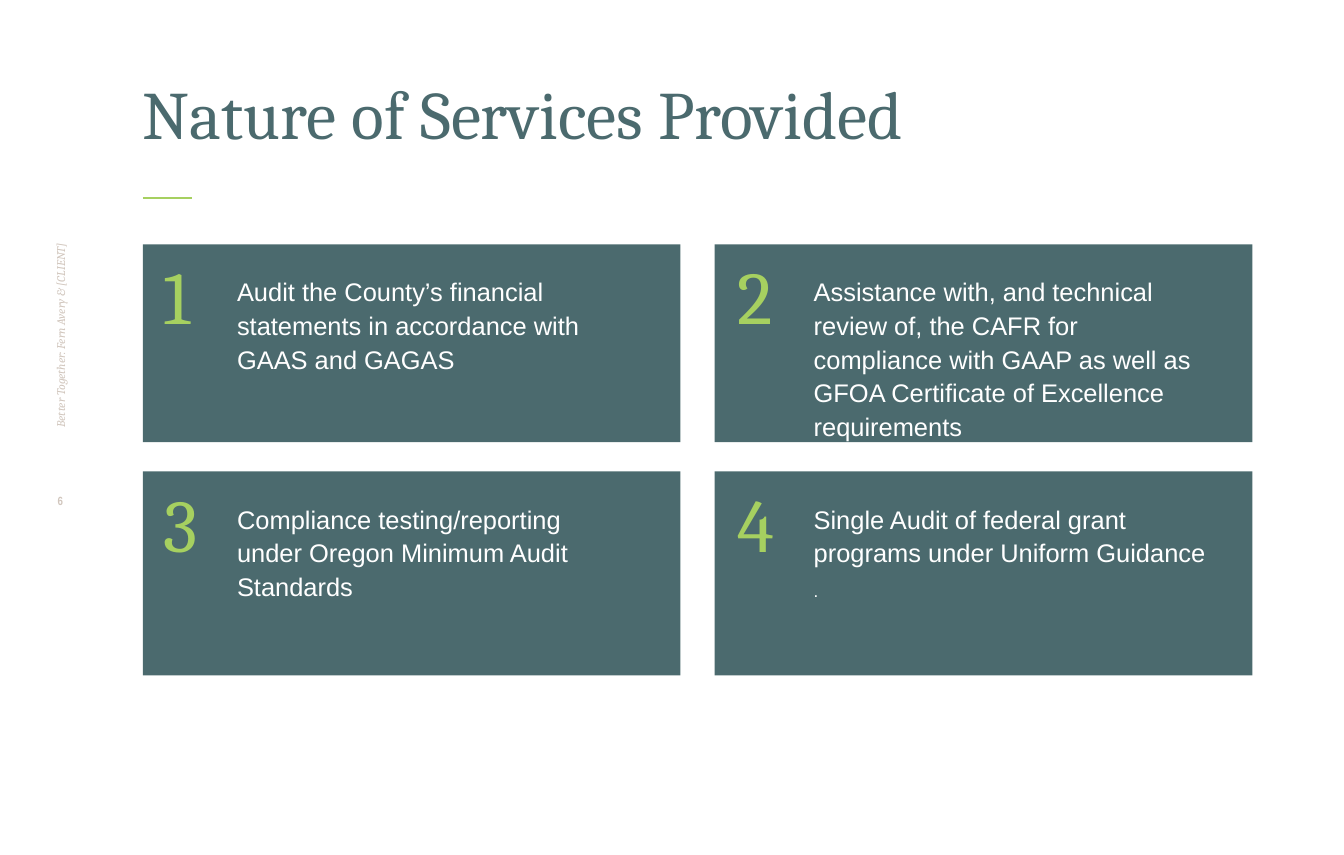
from dataclasses import dataclass

from lxml import etree
from pptx import Presentation
from pptx.dml.color import RGBColor
from pptx.enum.shapes import MSO_CONNECTOR, MSO_SHAPE
from pptx.enum.text import MSO_ANCHOR, PP_ALIGN
from pptx.oxml.ns import qn
from pptx.util import Inches, Pt

RECTANGLE = MSO_SHAPE.RECTANGLE
STRAIGHT = MSO_CONNECTOR.STRAIGHT
TOP, MIDDLE, BOTTOM = MSO_ANCHOR.TOP, MSO_ANCHOR.MIDDLE, MSO_ANCHOR.BOTTOM
LEFT, CENTER = PP_ALIGN.LEFT, PP_ALIGN.CENTER

TITLE = "Nature of Services Provided"
FOOTER = "Better Together: Fern Avery & [CLIENT]"
PAGE_NUMBER = "6"
SERVICES = [
    ["Audit the County’s financial statements in accordance with GAAS and GAGAS"],
    ["Assistance with, and technical review of, the CAFR for compliance with "
     "GAAP as well as GFOA Certificate of Excellence requirements"],
    ["Compliance testing/reporting under Oregon Minimum Audit Standards"],
    ["Single Audit of federal grant programs under Uniform Guidance", "."],
]


@dataclass(frozen=True)
class Theme:
    teal: str = "4B6A6E"
    green: str = "A6D060"
    beige: str = "D1C6BD"
    white: str = "FFFFFF"
    serif: str = "Cambria"
    sans: str = "Arial"
    narrow: str = "Arial Narrow"
    title_size: int = 40
    number_size: int = 44
    body_size: int = 15
    mark_size: int = 10
    footer_size: int = 7


THEME = Theme()

# Column: card left, number offset, text offset, text width. Row: top, height.
COLUMNS = [(1.17, 0.07, 0.72, 3.28), (5.85, 0.09, 0.76, 3.36)]
ROWS = [(2, 1.62), (3.86, 1.67)]
CARD_WIDTH = 4.4
TEXT_DROP = 0.19
TEXT_HEIGHT = 1.28
NUMBER_SIZE = (0.49, 0.84)


def add_text(slide, paragraphs, box, *, sizes, color, font, bold=False, italic=False,
             align=LEFT, anchor=TOP, insets=(0, 0), line_spacing=None,
             space_after=0, vertical=None):
    """Add a text box; sizes holds one type size for each paragraph."""
    frame = slide.shapes.add_textbox(*map(Inches, box)).text_frame
    frame.word_wrap = True
    frame.vertical_anchor = anchor
    frame.margin_left = frame.margin_right = Inches(insets[0])
    frame.margin_top = frame.margin_bottom = Inches(insets[1])
    if vertical:
        frame._txBody.bodyPr.set("vert", vertical)
    for index, (text, size) in enumerate(zip(paragraphs, sizes)):
        paragraph = frame.add_paragraph() if index else frame.paragraphs[0]
        paragraph.alignment = align
        paragraph.line_spacing = line_spacing
        paragraph.space_after = Pt(space_after)
        run = paragraph.add_run()
        run.text = text
        run.font.name = font
        run.font.size = Pt(size)
        run.font.bold = bold
        run.font.italic = italic
        run.font.color.rgb = RGBColor.from_string(color)


def add_accent_line(slide):
    line = slide.shapes.add_connector(
        STRAIGHT, Inches(1.17), Inches(1.62), Inches(1.57), Inches(1.62))
    line.line.color.rgb = RGBColor.from_string(THEME.green)
    line.line.width = Pt(1)
    etree.SubElement(line._element.spPr, qn("a:effectLst"))


def add_card(slide, index, paragraphs):
    row, column = divmod(index, len(COLUMNS))
    left, number_offset, text_offset, text_width = COLUMNS[column]
    top, height = ROWS[row]

    card = slide.shapes.add_shape(
        RECTANGLE, Inches(left), Inches(top), Inches(CARD_WIDTH), Inches(height))
    card.shadow.inherit = False
    card.fill.solid()
    card.fill.fore_color.rgb = RGBColor.from_string(THEME.teal)
    card.line.fill.background()

    add_text(slide, paragraphs,
             (left + text_offset, top + TEXT_DROP, text_width, TEXT_HEIGHT),
             sizes=(THEME.body_size, THEME.mark_size), color=THEME.white,
             font=THEME.sans, insets=(0.05, 0.05), line_spacing=1.1, space_after=6)
    add_text(slide, [str(index + 1)], (left + number_offset, top, *NUMBER_SIZE),
             sizes=[THEME.number_size], color=THEME.green, font=THEME.serif,
             insets=(0.1, 0.05))


def main():
    presentation = Presentation()
    presentation.slide_width = Inches(11)
    presentation.slide_height = Inches(7)
    slide = presentation.slides.add_slide(presentation.slide_layouts[6])

    add_accent_line(slide)
    add_text(slide, [FOOTER], (0.31, 0.5, 0.37, 3), sizes=[THEME.footer_size],
             color=THEME.beige, font=THEME.serif, italic=True, anchor=MIDDLE,
             vertical="vert270")
    add_text(slide, [PAGE_NUMBER], (0.31, 4.04, 0.37, 0.38),
             sizes=[THEME.footer_size], color=THEME.beige, font=THEME.narrow,
             bold=True, align=CENTER)
    add_text(slide, [TITLE], (1.17, 0.5, 9.08, 0.75), sizes=[THEME.title_size],
             color=THEME.teal, font=THEME.serif, anchor=BOTTOM)
    for index, paragraphs in enumerate(SERVICES):
        add_card(slide, index, paragraphs)

    presentation.save("out.pptx")


if __name__ == "__main__":
    main()
